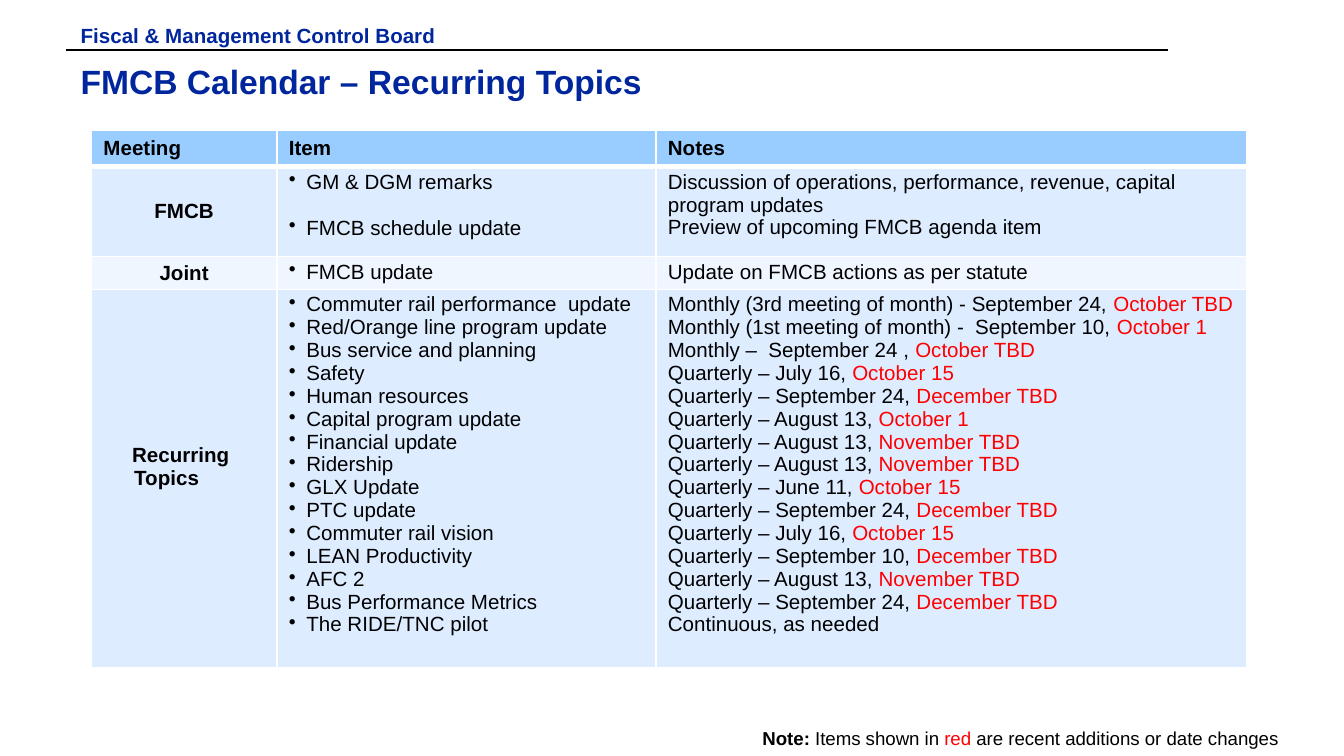
from lxml import etree
from pptx import Presentation
from pptx.dml.color import RGBColor
from pptx.enum.shapes import MSO_CONNECTOR
from pptx.enum.text import MSO_ANCHOR, PP_ALIGN
from pptx.oxml.ns import qn
from pptx.util import Inches, Pt

STRAIGHT = MSO_CONNECTOR.STRAIGHT
TOP, MIDDLE = MSO_ANCHOR.TOP, MSO_ANCHOR.MIDDLE
LEFT, CENTER, RIGHT = PP_ALIGN.LEFT, PP_ALIGN.CENTER, PP_ALIGN.RIGHT

NAVY = RGBColor(0x00, 0x26, 0x9E)
BLACK = RGBColor(0x00, 0x00, 0x00)
RED = RGBColor(0xFF, 0x00, 0x00)
HEADER_BLUE = RGBColor(0x99, 0xCC, 0xFF)
BAND_BLUE = RGBColor(0xDE, 0xEC, 0xFF)
BAND_PALE = RGBColor(0xEF, 0xF6, 0xFF)

UNIT = Inches(0.1)  # the slide is a grid of 100 columns by 56.25 rows
COLUMN_WIDTHS = [13.8, 28.2, 44]
ROW_HEIGHTS = [2.7, 6.7, 2.4, 28.1]
ROW_FILLS = [HEADER_BLUE, BAND_BLUE, BAND_PALE, BAND_BLUE]

HEADINGS = ["Meeting", "Item", "Notes"]
MEETINGS = [["FMCB"], ["Joint"], ["Recurring", "Topics"]]
# Each topic: item, note, date that was added or changed
TOPICS = [
    [("GM & DGM remarks",
      "Discussion of operations, performance, revenue, capital program updates", ""),
     ("FMCB schedule update", "Preview of upcoming FMCB agenda item", "")],
    [("FMCB update", "Update on FMCB actions as per statute", "")],
    [("Commuter rail performance  update",
      "Monthly (3rd meeting of month) - September 24, ", "October TBD"),
     ("Red/Orange line program update",
      "Monthly (1st meeting of month) -  September 10, ", "October 1"),
     ("Bus service and planning", "Monthly –  September 24 , ", "October TBD"),
     ("Safety", "Quarterly – July 16, ", "October 15"),
     ("Human resources", "Quarterly – September 24, ", "December TBD"),
     ("Capital program update", "Quarterly – August 13, ", "October 1"),
     ("Financial update", "Quarterly – August 13, ", "November TBD"),
     ("Ridership", "Quarterly – August 13, ", "November TBD"),
     ("GLX Update", "Quarterly – June 11, ", "October 15"),
     ("PTC update", "Quarterly – September 24, ", "December TBD"),
     ("Commuter rail vision", "Quarterly – July 16, ", "October 15"),
     ("LEAN Productivity", "Quarterly – September 10, ", "December TBD"),
     ("AFC 2", "Quarterly – August 13, ", "November TBD"),
     ("Bus Performance Metrics", "Quarterly – September 24, ", "December TBD"),
     ("The RIDE/TNC pilot", "Continuous, as needed", "")],
]


def write(frame, paragraphs, size=11, color=BLACK, bold=False, align=LEFT,
          bullet=False):
    """Fill a text frame; a paragraph is a list of (text, overrides) runs."""
    for index, runs in enumerate(paragraphs):
        paragraph = frame.paragraphs[0] if index == 0 else frame.add_paragraph()
        paragraph.alignment = align
        paragraph.line_spacing = 1.0
        if bullet:
            properties = paragraph._p.get_or_add_pPr()
            properties.set("marL", str(Inches(0.13)))
            properties.set("indent", str(-Inches(0.13)))
            etree.SubElement(properties, qn("a:buChar"), char="•")
        for text, overrides in runs:
            run = paragraph.add_run()
            run.text = text
            run.font.name = "Arial"
            run.font.size = Pt(size)
            run.font.bold = overrides.get("bold", bold)
            run.font.color.rgb = overrides.get("color", color)


def style_cell(cell, fill, bottom_width, anchor):
    """Give a table cell its white borders, fill, margins and anchor."""
    properties = cell._tc.get_or_add_tcPr()
    widths = {"a:lnL": 1, "a:lnR": 1, "a:lnT": 1, "a:lnB": bottom_width}
    for tag, width in widths.items():
        line = etree.SubElement(properties, qn(tag), w=str(Pt(width)))
        solid = etree.SubElement(line, qn("a:solidFill"))
        etree.SubElement(solid, qn("a:srgbClr"), val="FFFFFF")
    cell.fill.solid()
    cell.fill.fore_color.rgb = fill
    cell.margin_left = cell.margin_right = Inches(0.09)
    cell.margin_top = cell.margin_bottom = Inches(0.03)
    cell.vertical_anchor = anchor


presentation = Presentation()
presentation.slide_width = int(100 * UNIT)
presentation.slide_height = int(56.25 * UNIT)
slide = presentation.slides.add_slide(presentation.slide_layouts[5])

# Title, board name and note
title = slide.shapes.title
title.left, title.top, title.width, title.height = (
    int(share * UNIT) for share in (5.1, 3.6, 83.6, 4.8))
board_name = slide.shapes.add_textbox(
    *(int(share * UNIT) for share in (5.1, 1.3, 34.1, 1.9)))
note = slide.shapes.add_textbox(
    *(int(share * UNIT) for share in (54, 53.7, 42, 2.6)))
for shape, anchor in ((title, MIDDLE), (board_name, TOP), (note, TOP)):
    frame = shape.text_frame
    frame.word_wrap = True
    frame.vertical_anchor = anchor
    frame.margin_left = frame.margin_right = Inches(0.09)
    frame.margin_top = frame.margin_bottom = Inches(0.04)
write(title.text_frame, [[("FMCB Calendar – Recurring Topics", {})]],
      size=18, color=NAVY, bold=True)
write(board_name.text_frame, [[("Fiscal & Management Control Board", {})]],
      color=NAVY, bold=True)
write(note.text_frame, [[("Note: ", {"bold": True}), ("Items shown in ", {}),
                         ("red", {"color": RED}),
                         (" are recent additions or date changes", {})]],
      size=10, align=RIGHT)

# Rule under the board name
rule = slide.shapes.add_connector(
    STRAIGHT, *(int(share * UNIT) for share in (4.9, 3.7, 86.9, 3.7)))
rule.line.color.rgb = BLACK
rule.line.width = Pt(1)
etree.SubElement(rule._element.spPr, qn("a:effectLst"))

# Calendar table
table = slide.shapes.add_table(
    len(ROW_HEIGHTS), len(COLUMN_WIDTHS), int(6.8 * UNIT), int(9.7 * UNIT),
    int(sum(COLUMN_WIDTHS) * UNIT), int(sum(ROW_HEIGHTS) * UNIT)).table
for column, width in zip(table.columns, COLUMN_WIDTHS):
    column.width = int(width * UNIT)
for row_index, (row, height) in enumerate(zip(table.rows, ROW_HEIGHTS)):
    row.height = int(height * UNIT)
    for column_index, cell in enumerate(row.cells):
        is_label = row_index == 0 or column_index == 0
        style_cell(cell, ROW_FILLS[row_index], 3 if row_index == 0 else 1,
                   MIDDLE if is_label else TOP)

for column_index, heading in enumerate(HEADINGS):
    write(table.cell(0, column_index).text_frame, [[(heading, {})]], bold=True)

for row_index, (meeting, topics) in enumerate(zip(MEETINGS, TOPICS), start=1):
    label, items, notes = (table.cell(row_index, index) for index in range(3))
    notes.margin_right = Inches(0.05)
    write(label.text_frame, [[(line, {})] for line in meeting],
          bold=True, align=CENTER)
    write(items.text_frame, [[(item, {})] for item, _, _ in topics], bullet=True)
    write(notes.text_frame,
          [[(text, {})] + ([(date, {"color": RED})] if date else [])
           for _, text, date in topics])

# The first item keeps level with its two-line note
table.cell(1, 1).text_frame.paragraphs[0].space_after = Pt(12.3)

# The last label sits a little high, its lines to the left
topics_label = table.cell(3, 0)
topics_label.margin_bottom = Inches(0.2)
for paragraph, right_indent in zip(topics_label.text_frame.paragraphs, (0.05, 0.26)):
    paragraph._p.get_or_add_pPr().set("marR", str(Inches(right_indent)))

presentation.save("out.pptx")
